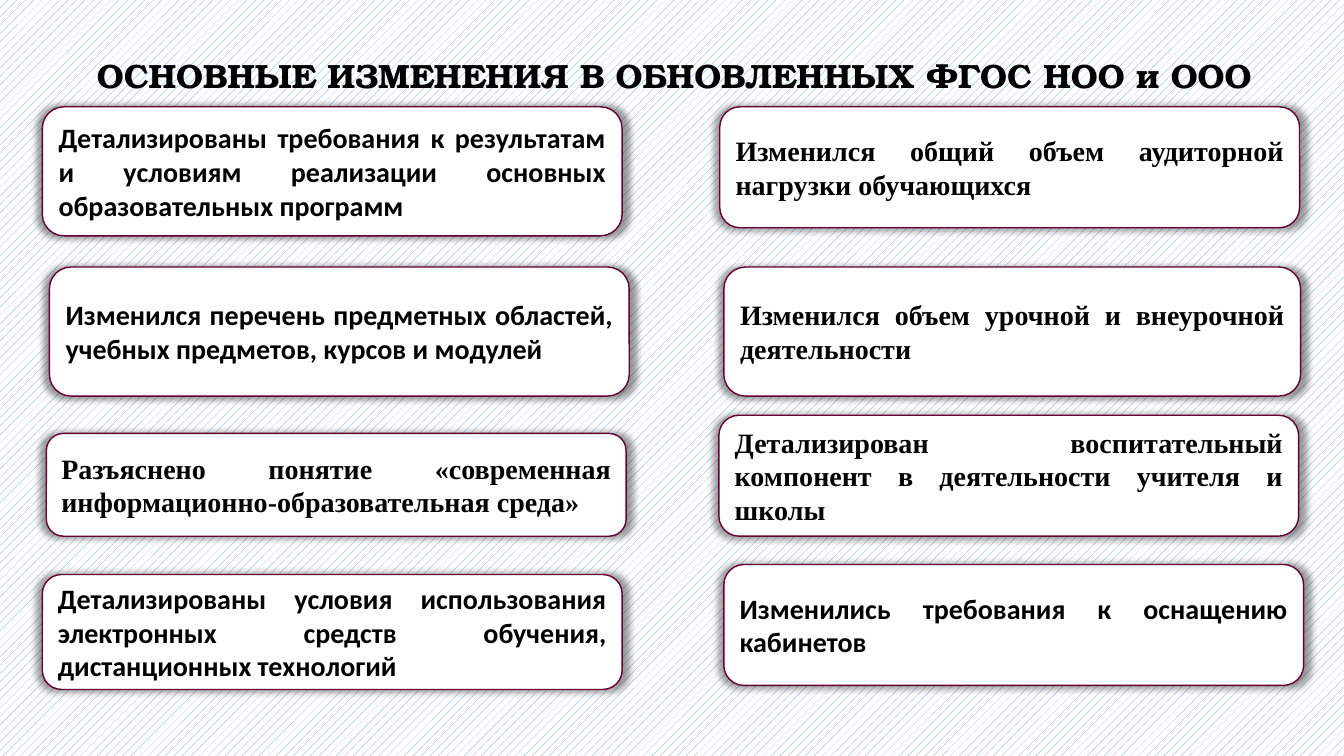
from lxml.etree import SubElement
from pptx import Presentation
from pptx.dml.color import RGBColor
from pptx.enum.dml import MSO_PATTERN
from pptx.enum.shapes import MSO_SHAPE
from pptx.enum.text import MSO_ANCHOR, MSO_AUTO_SIZE, PP_ALIGN
from pptx.oxml.ns import qn
from pptx.util import Inches, Pt

TITLE = "ОСНОВНЫЕ ИЗМЕНЕНИЯ В ОБНОВЛЕННЫХ ФГОС НОО и ООО"
SANS, SERIF = "Calibri", "Times New Roman"
CARD_WIDTH = 43.14

LEFT_CARDS = [
    (3.15, 14.13, CARD_WIDTH, 17.07, SANS,
     "Детализированы требования к результатам и условиям реализации основных образовательных программ"),
    (3.68, 35.33, CARD_WIDTH, 17.07, SANS,
     "Изменился перечень предметных областей, учебных предметов, курсов и модулей"),
    (3.45, 57.33, CARD_WIDTH, 13.6, SERIF,
     "Разъяснено понятие «современная информационно-образовательная среда»"),
    (3.15, 76, CARD_WIDTH, 15.2, SANS,
     "Детализированы условия использования электронных средств обучения, дистанционных технологий"),
]
RIGHT_CARDS = [
    (53.56, 14.13, CARD_WIDTH, 16, SERIF,
     "Изменился общий объем аудиторной нагрузки обучающихся"),
    (53.86, 35.33, 42.91, 17.07, SERIF,
     "Изменился объем урочной и внеурочной деятельности"),
    (53.49, 54.93, CARD_WIDTH, 16, SERIF,
     "Детализирован воспитательный компонент в деятельности учителя и школы"),
    (53.86, 74.67, CARD_WIDTH, 16, SANS,
     "Изменились требования к оснащению кабинетов"),
]


def color(value):
    return RGBColor.from_string(value)


def apply(target, values):
    for name, value in values.items():
        setattr(target, name, value)


class ChangesSlide:
    ink, paper, border, stripe = "000000", "FFFFFF", "660033", "5B9BD5"

    def __init__(self, presentation):
        self.width = presentation.slide_width
        self.height = presentation.slide_height
        self.slide = presentation.slides.add_slide(presentation.slide_layouts[5])

    def place(self, left, top, width, height):
        return {
            "left": round(self.width * left / 100),
            "top": round(self.height * top / 100),
            "width": round(self.width * width / 100),
            "height": round(self.height * height / 100),
        }

    def background(self):
        fill = self.slide.background.fill
        fill.patterned()
        fill.pattern = MSO_PATTERN.PERCENT_20
        fill.fore_color.rgb = color(self.stripe)
        fill.back_color.rgb = color(self.paper)

    def set_text(self, shape, text, font, size, frame_format, **paragraph_format):
        frame = shape.text_frame
        frame.text = text
        apply(frame, {"word_wrap": True, **frame_format})
        paragraph = frame.paragraphs[0]
        apply(paragraph, {"alignment": PP_ALIGN.JUSTIFY, **paragraph_format})
        run_font = paragraph.runs[0].font
        apply(run_font, {"name": font, "size": Pt(size), "bold": True})
        run_font.color.rgb = color(self.ink)
        return paragraph

    def title(self, text, *area):
        shape = self.slide.shapes.title
        apply(shape, self.place(*area))
        frame_format = {
            "vertical_anchor": MSO_ANCHOR.TOP,
            "auto_size": MSO_AUTO_SIZE.SHAPE_TO_FIT_TEXT,
        }
        paragraph = self.set_text(shape, text, "TeX Gyre Bonum", 24, frame_format, line_spacing=1.5)
        paragraph._p.get_or_add_pPr().set("indent", str(Inches(0.37)))

    def shadow(self, shape):
        shape.shadow.inherit = False
        effects = shape._element.spPr.find(qn("a:effectLst"))
        shadow = SubElement(effects, qn("a:outerShdw"), blurRad="63500", sx="102000",
                            sy="102000", algn="ctr", rotWithShape="0")
        tint = SubElement(shadow, qn("a:srgbClr"), val=self.ink)
        SubElement(tint, qn("a:alpha"), val="40000")

    def card(self, left, top, width, height, font, text):
        area = self.place(left, top, width, height)
        shape = self.slide.shapes.add_shape(MSO_SHAPE.ROUNDED_RECTANGLE, **area)
        shape.fill.solid()
        shape.fill.fore_color.rgb = color(self.paper)
        shape.line.color.rgb = color(self.border)
        shape.line.width = Pt(1)
        self.shadow(shape)
        self.set_text(shape, text, font, 20, {"vertical_anchor": MSO_ANCHOR.MIDDLE})


def main():
    presentation = Presentation()
    apply(presentation, {"slide_width": Inches(13.33), "slide_height": Inches(7.5)})
    changes = ChangesSlide(presentation)
    changes.background()
    changes.title(TITLE, 3.68, 3.87, 91.37, 9.47)
    for card in LEFT_CARDS + RIGHT_CARDS:
        changes.card(*card)
    presentation.save("out.pptx")


if __name__ == "__main__":
    main()
